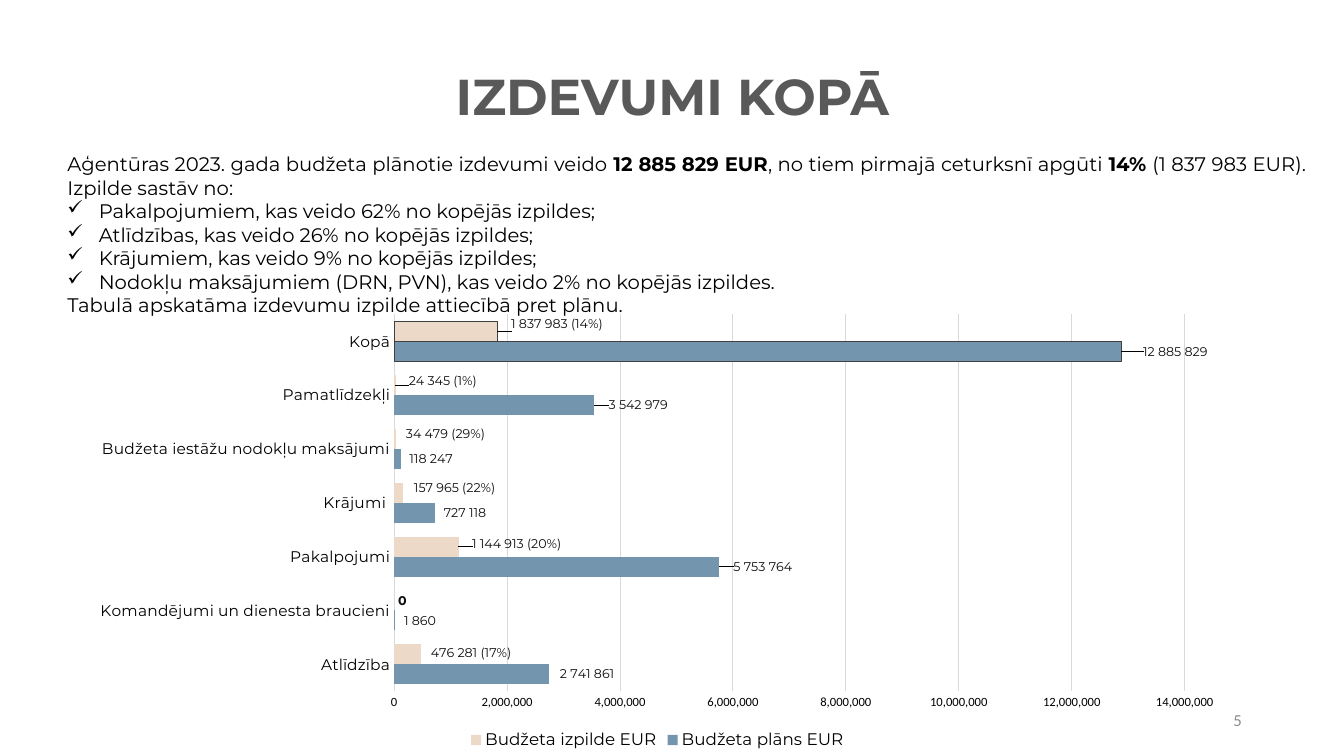
from dataclasses import dataclass

from lxml import etree
from pptx import Presentation
from pptx.chart.data import CategoryChartData
from pptx.dml.color import RGBColor
from pptx.enum.chart import XL_CHART_TYPE, XL_LABEL_POSITION, XL_LEGEND_POSITION, XL_TICK_MARK
from pptx.enum.text import MSO_ANCHOR, PP_ALIGN
from pptx.oxml import parse_xml
from pptx.oxml.ns import nsdecls, qn
from pptx.util import Cm, Pt

BAR_CLUSTERED = XL_CHART_TYPE.BAR_CLUSTERED
OUTSIDE_END = XL_LABEL_POSITION.OUTSIDE_END
LEGEND_BOTTOM = XL_LEGEND_POSITION.BOTTOM
NO_TICK = XL_TICK_MARK.NONE
MIDDLE, TOP = MSO_ANCHOR.MIDDLE, MSO_ANCHOR.TOP
CENTER, RIGHT, JUSTIFY = PP_ALIGN.CENTER, PP_ALIGN.RIGHT, PP_ALIGN.JUSTIFY


@dataclass(frozen=True)
class Theme:
    heading_font: str = "Montserrat"
    number_font: str = "Calibri"
    title: RGBColor = RGBColor(0x59, 0x59, 0x59)
    text: RGBColor = RGBColor(0, 0, 0)
    label: RGBColor = RGBColor(0x0D, 0x0D, 0x0D)
    page: RGBColor = RGBColor(0x8C, 0x8C, 0x8C)
    grid: RGBColor = RGBColor(0xD9, 0xD9, 0xD9)
    outline: RGBColor = RGBColor(0x40, 0x40, 0x40)
    plan: RGBColor = RGBColor(0x73, 0x95, 0xAD)
    spent: RGBColor = RGBColor(0xEC, 0xD9, 0xC8)
    title_size: Pt = Pt(36)
    body_size: Pt = Pt(14)
    small_size: Pt = Pt(12)
    category_size: Pt = Pt(11)
    chart_size: Pt = Pt(10)
    label_size: Pt = Pt(9)


theme = Theme()


def style(font, name, size, color, bold=None):
    font.name, font.size, font.bold = name, size, bold
    font.color.rgb = color


def add_text(slide, left, top, width, height, anchor):
    """Add an empty wrapping text box, in centimetres, and return its text frame."""
    frame = slide.shapes.add_textbox(Cm(left), Cm(top), Cm(width), Cm(height)).text_frame
    frame.word_wrap = True
    frame.vertical_anchor = anchor
    return frame


prs = Presentation()
prs.slide_width, prs.slide_height = Cm(33.87), Cm(19.05)
slide = prs.slides.add_slide(prs.slide_layouts[6])

# Title and page number
for text, box, align, font in (
    ("IZDEVUMI KOPĀ", (2.34, 0.66, 29.21, 3.68), CENTER,
     (theme.heading_font, theme.title_size, theme.title, True)),
    ("5", (23.93, 17.65, 7.62, 1.02), RIGHT,
     (theme.number_font, theme.small_size, theme.page)),
):
    line = add_text(slide, *box, MIDDLE).paragraphs[0]
    line.text = text
    line.alignment = align
    line.line_spacing = 0.9
    style(line.font, *font)

# Budget chart: value, label, and label shift (x, y) as a share of the chart
categories = ["Atlīdzība", "Komandējumi un dienesta braucieni", "Pakalpojumi", "Krājumi ",
              "Budžeta iestāžu nodokļu maksājumi", "Pamatlīdzekļi", "Kopā"]
plan = [
    (2741861, "2 741 861", 0.006, 0),
    (1860, "1 860", 0.005, 0),
    (5753764, "5 753 764", 0.009, 0),
    (727118, "727 118", 0.004, 0),
    (118247, "118 247", 0.004, 0),
    (3542979, "3 542 979", 0.009, 0),
    (12885829, "12 885 829", 0.015, 0),
]
spent = [
    (476281, "476 281 (17%)", 0.005, -0.004),
    (0, None, 0, 0),
    (1144913, "1 144 913 (20%)", 0.008, -0.007),
    (157965, "157 965 (22%)", 0.006, -0.011),
    (34479, "34 479 (29%)", 0.005, -0.011),
    (24345, "24 345 (1%)", 0.008, -0.011),
    (1837983, "1 837 983 (14%)", 0.008, -0.018),
]
budget_data = CategoryChartData(number_format="#,##0")
budget_data.categories = categories
budget_data.add_series("Budžeta plāns EUR", [row[0] for row in plan])
budget_data.add_series("Budžeta izpilde EUR", [row[0] for row in spent])
chart = slide.shapes.add_chart(
    BAR_CLUSTERED, Cm(1.96), Cm(7.7), Cm(29.21), Cm(11.3), budget_data).chart
style(chart.font, theme.number_font, theme.chart_size, theme.text)
chart.has_title = False
chart.has_legend = True
chart.legend.position = LEGEND_BOTTOM
chart.legend.include_in_layout = False
style(chart.legend.font, theme.heading_font, theme.small_size, theme.text)

category_axis, value_axis = chart.category_axis, chart.value_axis
style(category_axis.tick_labels.font, theme.heading_font, theme.category_size, theme.text)
style(value_axis.tick_labels.font, theme.number_font, theme.label_size, theme.text)
for axis in (category_axis, value_axis):
    axis.major_tick_mark = axis.minor_tick_mark = NO_TICK
    axis.format.line.fill.background()
value_axis.minimum_scale, value_axis.maximum_scale = 0, 14000000
value_axis.major_unit = 2000000
value_axis.tick_labels.number_format = "#,##0"
value_axis.tick_labels.number_format_is_linked = False
value_axis.major_gridlines.format.line.color.rgb = theme.grid
value_axis.major_gridlines.format.line.width = Pt(0.75)

plot = chart.plots[0]
plot.gap_width, plot.overlap = 70, 0
plot.vary_by_categories = False
for series, rows, color in zip(plot.series, (plan, spent), (theme.plan, theme.spent)):
    series.format.fill.solid()
    series.format.fill.fore_color.rgb = color
    series.invert_if_negative = False
    labels = series.data_labels
    labels.show_value = True
    labels.number_format, labels.number_format_is_linked = "#,##0", False
    labels.position = OUTSIDE_END
    style(labels.font, theme.heading_font, theme.label_size, theme.label, True)
    for index, (_, text, shift_x, shift_y) in enumerate(rows):
        if text is None:
            continue
        label = series.points[index].data_label
        label.position = OUTSIDE_END
        paragraph = label.text_frame.paragraphs[0]
        paragraph.text = text
        style(paragraph.font, theme.heading_font, theme.label_size, theme.label, False)
        label_xml = paragraph._p.xpath("ancestor::c:dLbl")[0]
        label_xml.insert(1, parse_xml(
            f'<c:layout {nsdecls("c")}><c:manualLayout>'
            f'<c:x val="{shift_x}"/><c:y val="{shift_y}"/></c:manualLayout></c:layout>'))
    total = series.points[len(categories) - 1].format
    total.fill.solid()
    total.fill.fore_color.rgb = color
    total.line.color.rgb = theme.outline
    total.line.width = Pt(0.75)
plot_area = chart._chartSpace.chart.plotArea
for old_layout in plot_area.findall(qn("c:layout")):
    plot_area.remove(old_layout)
plot_area.insert(0, parse_xml(
    f'<c:layout {nsdecls("c")}><c:manualLayout><c:layoutTarget val="inner"/>'
    '<c:xMode val="edge"/><c:yMode val="edge"/><c:x val="0.273"/><c:y val="0.02"/>'
    '<c:w val="0.682"/><c:h val="0.84"/></c:manualLayout></c:layout>'))

# Summary: (has a check mark, [(text, bold), ...])
summary = [
    (False, [("Aģentūras 2023. gada budžeta plānotie izdevumi veido ", False),
             ("12 885 829 EUR", True), (", no tiem pirmajā ceturksnī apgūti ", False),
             ("14% ", True), ("(1 837 983 EUR). Izpilde sastāv no: ", False)]),
    (True, [("Pakalpojumiem, kas veido 62% no kopējās izpildes;", False)]),
    (True, [("Atlīdzības, kas veido 26% no kopējās izpildes;", False)]),
    (True, [("Krājumiem, kas veido 9% no kopējās izpildes;", False)]),
    (True, [("Nodokļu maksājumiem (DRN, PVN), kas veido 2% no kopējās izpildes.", False)]),
    (False, [("Tabulā apskatāma izdevumu izpilde attiecībā pret plānu.", False)]),
]
summary_frame = add_text(slide, 1.45, 3.71, 31.72, 4.45, TOP)
for index, (checked, pieces) in enumerate(summary):
    paragraph = summary_frame.add_paragraph() if index else summary_frame.paragraphs[0]
    paragraph.alignment = JUSTIFY
    style(paragraph.font, theme.heading_font, theme.body_size, theme.text)
    for text, bold in pieces:
        run = paragraph.add_run()
        run.text = text
        if bold:
            run.font.bold = True
    if checked:
        properties = paragraph._p.get_or_add_pPr()
        properties.set("marL", str(Cm(0.79)))
        properties.set("indent", str(-Cm(0.79)))
        bullet = etree.Element(qn("a:buChar"), char="✓")
        properties.insert(0, bullet)

prs.save("out.pptx")
